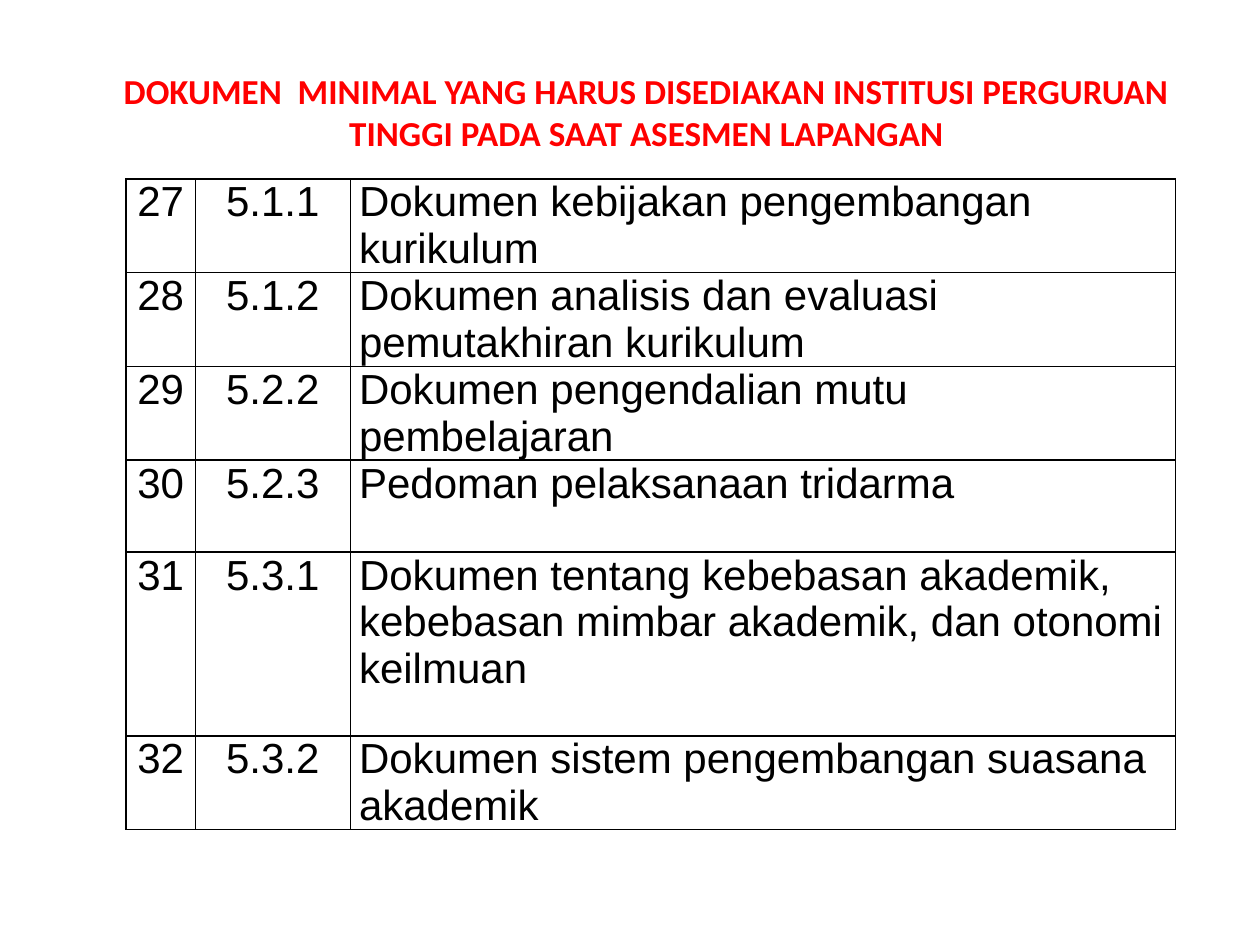
from lxml import etree
from pptx import Presentation, util as u
from pptx.dml.color import RGBColor
from pptx.enum import text
from pptx.oxml import ns

HEX = {"title": "FF0000", "ink": "000000"}
TITLE = ("DOKUMEN  MINIMAL YANG HARUS DISEDIAKAN INSTITUSI PERGURUAN "
         "TINGGI PADA SAAT ASESMEN LAPANGAN")
DOCS = [
    ("27", "5.1.1", "Dokumen kebijakan pengembangan kurikulum"),
    ("28", "5.1.2", "Dokumen analisis dan evaluasi pemutakhiran kurikulum"),
    ("29", "5.2.2", "Dokumen pengendalian mutu pembelajaran"),
    ("30", "5.2.3", "Pedoman pelaksanaan tridarma"),
    ("31", "5.3.1", "Dokumen tentang kebebasan akademik, kebebasan mimbar "
                    "akademik, dan otonomi keilmuan"),
    ("32", "5.3.2", "Dokumen sistem pengembangan suasana akademik"),
]
COLS = [0.55, 1.23, 6.55]
ROW = 0.73
SPANS = [1, 1, 1, 1, 2, 1]  # row heights in units of ROW


class Deck:
    def __init__(self, wide, high):
        self.prs = Presentation()
        self.prs.slide_width = u.Inches(wide)
        self.prs.slide_height = u.Inches(high)
        self.slide = self.prs.slides.add_slide(self.prs.slide_layouts[5])

    def style(self, para, face, size, tone, bold, align):
        para.alignment = align
        font = para.font
        font.name, font.size, font.bold = face, u.Pt(size), bold
        font.color.rgb = RGBColor.from_string(HEX[tone])

    def title(self, words, left, top, wide, high):
        box = self.slide.shapes.title
        box.left, box.top = u.Inches(left), u.Inches(top)
        box.width, box.height = u.Inches(wide), u.Inches(high)
        frame = box.text_frame
        frame.text = words
        frame.word_wrap = True
        frame.auto_size = text.MSO_AUTO_SIZE.NONE
        frame.vertical_anchor = text.MSO_ANCHOR.TOP
        self.style(frame.paragraphs[0], "Calibri", 20, "title", True,
                   text.PP_ALIGN.CENTER)

    def table(self, rows, left, top, cols, highs):
        grid = self.slide.shapes.add_table(
            len(rows), len(cols), u.Inches(left), u.Inches(top),
            u.Inches(sum(cols)), u.Inches(sum(highs))).table
        grid.first_row = grid.horz_banding = False
        for col, wide in zip(grid.columns, cols):
            col.width = u.Inches(wide)
        for row, high, words in zip(grid.rows, highs, rows):
            row.height = u.Inches(high)
            for n, (cell, word) in enumerate(zip(row.cells, words)):
                last = n == len(cols) - 1
                self.cell(cell, word, text.PP_ALIGN.LEFT if last
                          else text.PP_ALIGN.CENTER)

    def cell(self, cell, word, align):
        cell.text = word
        cell.margin_left = cell.margin_right = u.Inches(0.07)
        cell.margin_top = cell.margin_bottom = 0
        self.style(cell.text_frame.paragraphs[0], "Arial", 24, "ink", False,
                   align)
        self.border(cell)
        cell.fill.background()

    def border(self, cell):
        props = cell._tc.get_or_add_tcPr()
        for side in ("lnL", "lnR", "lnT", "lnB"):
            line = etree.SubElement(props, ns.qn("a:" + side),
                                    w=str(u.Pt(1)))
            fill = etree.SubElement(line, ns.qn("a:solidFill"))
            etree.SubElement(fill, ns.qn("a:srgbClr"), val=HEX["ink"])


def main():
    deck = Deck(10, 7.5)
    deck.table(DOCS, 1, 1.42, COLS, [ROW * n for n in SPANS])
    deck.title(TITLE, 0.67, 0.5, 8.92, 1.08)
    deck.prs.save("out.pptx")


if __name__ == "__main__":
    main()
